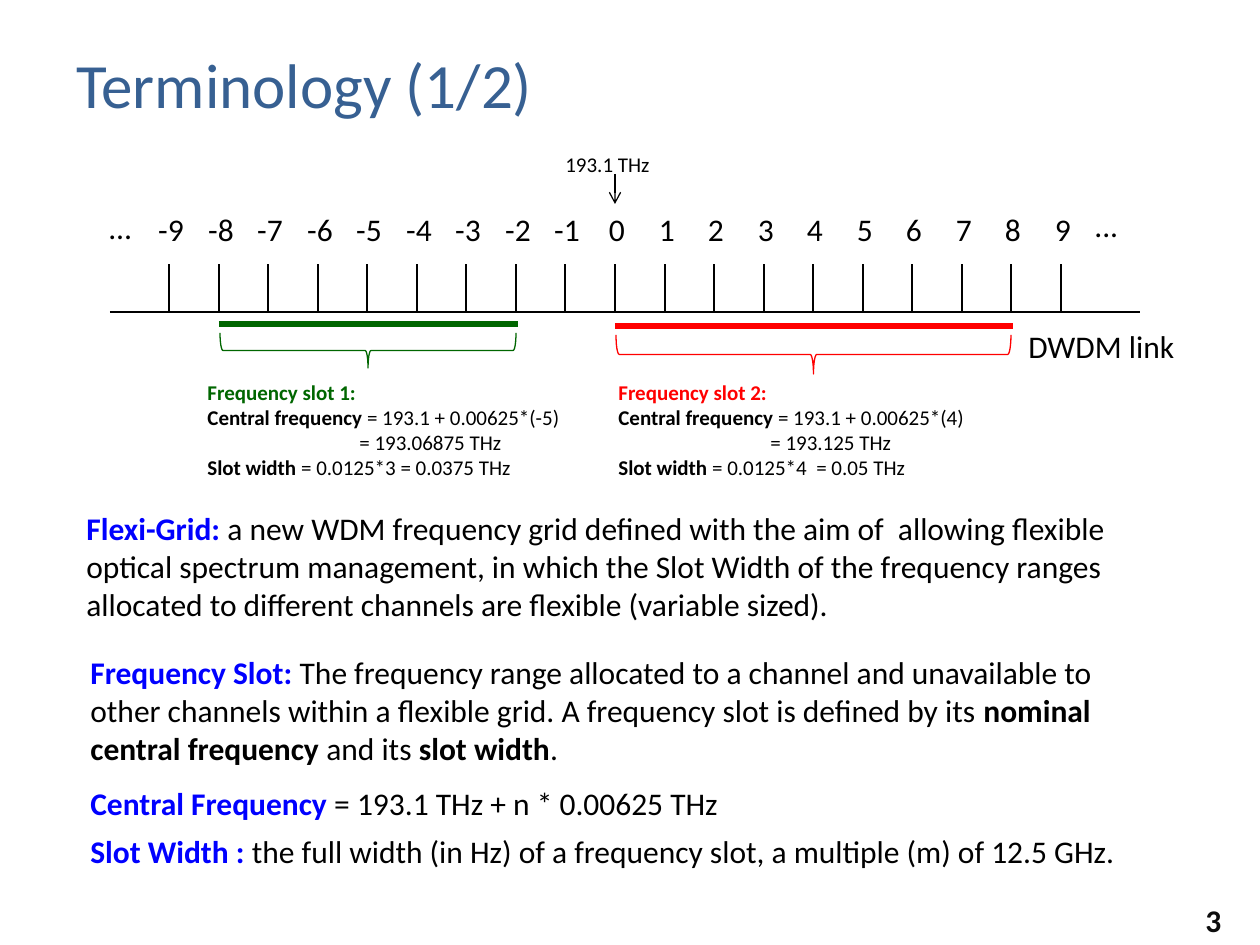
from lxml.etree import SubElement
from pptx import Presentation
from pptx.dml.color import RGBColor
from pptx.enum.shapes import MSO_CONNECTOR, MSO_SHAPE
from pptx.enum.text import MSO_ANCHOR, MSO_AUTO_SIZE, PP_ALIGN
from pptx.oxml.ns import qn
from pptx.util import Emu, Pt

EMU_PER_PX = 914400 / 126
FONT = "Calibri"
BLACK = RGBColor(0x00, 0x00, 0x00)
NEAR_BLACK = RGBColor(0x0D, 0x0D, 0x0D)
TITLE_BLUE = RGBColor(0x37, 0x60, 0x92)
TERM_BLUE = RGBColor(0x00, 0x00, 0xFF)
GREEN = RGBColor(0x00, 0x66, 0x00)
RED = RGBColor(0xFF, 0x00, 0x00)

AXIS_Y = 312
ZERO_X = 615
OUTER_CHANNEL = 9
OUTER_OFFSET = 446


def px(length):
    return Emu(round(length * EMU_PER_PX))


def channel_x(channel):
    return ZERO_X + round(channel * OUTER_OFFSET / OUTER_CHANNEL)


def write(paragraph, text, size=18, color=BLACK, bold=False):
    run = paragraph.add_run()
    run.text = text
    run.font.name = FONT
    run.font.size = Pt(size)
    run.font.bold = bold
    run.font.color.rgb = color


class SlideBuilder:
    def __init__(self, slide):
        self.slide = slide

    def title(self, text, left, top, width, height):
        heading = self.slide.shapes.title
        heading.left, heading.top = px(left), px(top)
        heading.width, heading.height = px(width), px(height)
        frame = heading.text_frame
        frame.auto_size = MSO_AUTO_SIZE.NONE
        frame.vertical_anchor = MSO_ANCHOR.MIDDLE
        frame.paragraphs[0].alignment = PP_ALIGN.LEFT
        write(frame.paragraphs[0], text, size=36, color=TITLE_BLUE)

    def text(self, paragraphs, left, top, width, height, size=18,
             align=PP_ALIGN.LEFT, wrap=True, space_after=0, indents=None):
        box = self.slide.shapes.add_textbox(px(left), px(top), px(width), px(height))
        frame = box.text_frame
        frame.word_wrap = wrap
        for index, runs in enumerate(paragraphs):
            paragraph = frame.paragraphs[0] if index == 0 else frame.add_paragraph()
            paragraph.alignment = align
            paragraph.space_after = Pt(space_after)
            if indents and index in indents:
                paragraph._p.get_or_add_pPr().set("marL", str(px(indents[index])))
            for content, style in runs:
                write(paragraph, content, size=size, **style)

    def line(self, x1, y1, x2, y2, color=BLACK, width=0.75, arrow=False):
        connector = self.slide.shapes.add_connector(
            MSO_CONNECTOR.STRAIGHT, px(x1), px(y1), px(x2), px(y2))
        connector.line.color.rgb = color
        connector.line.width = Pt(width)
        if arrow:
            SubElement(connector.line._get_or_add_ln(), qn("a:tailEnd"), type="arrow")
        SubElement(connector._element.spPr, qn("a:effectLst"))

    def brace_below(self, x1, x2, top, depth, color):
        span = x2 - x1
        left = (x1 + x2 - depth) / 2
        brace = self.slide.shapes.add_shape(
            MSO_SHAPE.RIGHT_BRACE, px(left), px(top + (depth - span) / 2),
            px(depth), px(span))
        brace.rotation = 90
        brace.shadow.inherit = False
        brace.fill.background()
        brace.line.color.rgb = color
        brace.line.width = Pt(0.75)

    def frequency_slot(self, name, first, last, bar_y, depth, text_left,
                       formula, frequency, slot_width, color):
        start, end = channel_x(first), channel_x(last)
        self.line(start, bar_y, end + 2, bar_y, color=color, width=3)
        self.brace_below(start + 1, end, bar_y + 9, depth, color)
        strong = {"bold": True}
        self.text(
            [[(name, {"bold": True, "color": color})],
             [("Central frequency ", strong), (formula, {})],
             [(frequency, {})],
             [("Slot width ", strong), (slot_width, {})]],
            text_left, 373, 408, 115, size=12, indents={2: 152})


def main():
    presentation = Presentation()
    presentation.slide_width, presentation.slide_height = px(1260), px(945)
    builder = SlideBuilder(presentation.slides.add_slide(presentation.slide_layouts[5]))
    builder.title("Terminology (1/2)", 64, 35, 1163, 97)

    builder.line(110, AXIS_Y, 1140, AXIS_Y)
    for channel in range(-OUTER_CHANNEL, OUTER_CHANNEL + 1):
        x = channel_x(channel)
        builder.line(x, AXIS_Y, x, AXIS_Y - 48)
        builder.text([[(str(channel), {})]], x - 24, 204, 52, 50,
                     align=PP_ALIGN.CENTER, wrap=False)
    builder.text([[("…", {})]], 97, 202, 96, 50)
    builder.text([[("...", {})]], 1082, 200, 49, 50)
    builder.text([[("193.1 THz", {})]], 553, 145, 116, 38, size=12)
    builder.line(ZERO_X, 174, ZERO_X, 204, arrow=True)
    builder.text([[("DWDM link", {})]], 1016, 321, 186, 50)

    builder.frequency_slot(
        "Frequency slot 1:", -8, -2, 324, 35, 195, "= 193.1 + 0.00625*(-5)",
        "= 193.06875 THz", "= 0.0125*3 = 0.0375 THz", GREEN)
    builder.frequency_slot(
        "Frequency slot 2:", 0, 8, 326, 39, 606, "= 193.1 + 0.00625*(4)",
        "= 193.125 THz", "= 0.0125*4  = 0.05 THz", RED)

    term = {"bold": True, "color": TERM_BLUE}
    strong = {"bold": True}
    builder.text(
        [[("Flexi-Grid: ", term),
          ("a new WDM frequency grid defined with the aim of  allowing flexible "
           "optical spectrum management, in which the Slot Width of the frequency "
           "ranges allocated to different channels are flexible (variable sized).", {})]],
        74, 503, 1131, 126)
    builder.text(
        [[("Frequency Slot: ", term),
          ("The frequency range allocated to a channel and unavailable to other "
           "channels within a flexible grid. A frequency slot is defined by its ", {}),
          ("nominal central frequency ", strong), ("and its ", {}),
          ("slot width", strong), (".", {})]],
        78, 647, 1101, 127)
    builder.text(
        [[("Central Frequency ", term), ("= 193.1 THz + n * 0.00625 THz", {})],
         [("Slot Width : ", term),
          ("the full width (in Hz) of a frequency slot, a multiple (m) of 12.5 GHz.", {})]],
        78, 778, 1099, 100, space_after=6)
    builder.text([[("3", {"bold": True, "color": NEAR_BLACK})]], 1193, 895, 66, 50)

    presentation.save("out.pptx")


if __name__ == "__main__":
    main()
